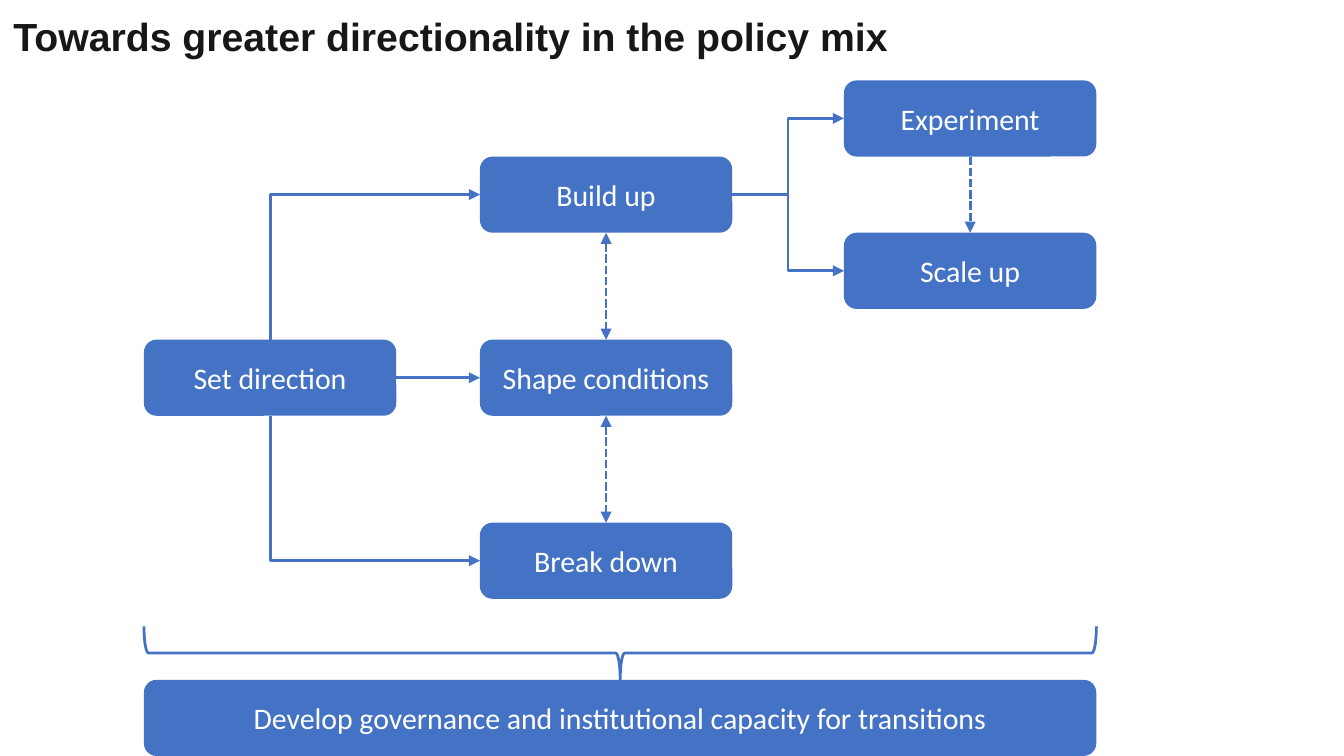
from pptx import Presentation
from pptx.dml.color import RGBColor
from pptx.enum.dml import MSO_LINE
from pptx.enum.shapes import MSO_CONNECTOR as Link, MSO_SHAPE as Shape
from pptx.enum.text import MSO_ANCHOR as Anchor, PP_ALIGN as Align
from pptx.oxml.ns import qn
from pptx.util import Cm, Pt
from lxml.etree import SubElement

BLUE = RGBColor(0x44, 0x72, 0xC4)
WHITE = RGBColor(0xFF, 0xFF, 0xFF)
INK = RGBColor(0x18, 0x17, 0x17)
NODE_WIDTH, NODE_HEIGHT = Cm(4.77), Cm(1.44)
LINE_WIDTH = Pt(1.5)
TOP, LEFT, BOTTOM, RIGHT = range(4)


def add_span(frame, text, font, size, color, bold=False):
    span = frame.paragraphs[0].add_run()
    span.text = text
    span.font.name = font
    span.font.size = Pt(size)
    span.font.bold = bold
    span.font.color.rgb = color


def add_node(page, text, left, top, width=NODE_WIDTH):
    node = page.shapes.add_shape(Shape.ROUNDED_RECTANGLE, left, top, width, NODE_HEIGHT)
    node.shadow.inherit = False
    node.fill.solid()
    node.fill.fore_color.rgb = BLUE
    node.line.fill.background()
    node.text_frame.word_wrap = True
    node.text_frame.vertical_anchor = Anchor.MIDDLE
    node.text_frame.paragraphs[0].alignment = Align.CENTER
    add_span(node.text_frame, text, "Calibri", 16, WHITE)
    return node


def side_point(node, side):
    middle_x, middle_y = node.left + node.width // 2, node.top + node.height // 2
    return {
        TOP: (middle_x, node.top),
        LEFT: (node.left, middle_y),
        BOTTOM: (middle_x, node.top + node.height),
        RIGHT: (node.left + node.width, middle_y),
    }[side]


def style_arrow(arrow, ends=("tailEnd",), dashed=False):
    arrow.line.color.rgb = BLUE
    arrow.line.width = LINE_WIDTH
    if dashed:
        arrow.line.dash_style = MSO_LINE.SQUARE_DOT
    outline = arrow.line._get_or_add_ln()
    for end in ends:
        SubElement(outline, qn("a:" + end), type="triangle")
    SubElement(arrow._element.spPr, qn("a:effectLst"))


def add_straight_arrow(page, source, source_side, target, target_side, **style):
    arrow = page.shapes.add_connector(
        Link.STRAIGHT, *side_point(source, source_side), *side_point(target, target_side))
    arrow.begin_connect(source, source_side)
    arrow.end_connect(target, target_side)
    style_arrow(arrow, **style)


def add_step_arrow(page, source, target):
    arrow = page.shapes.add_connector(
        Link.ELBOW, *side_point(source, RIGHT), *side_point(target, LEFT))
    style_arrow(arrow)


def add_corner_arrow(page, source, side):
    def draw(target):
        start_x, start_y = side_point(source, side)
        end_x, end_y = side_point(target, LEFT)
        across, along = end_x - start_x, abs(end_y - start_y)
        middle_x, middle_y = (start_x + end_x) // 2, (start_y + end_y) // 2
        left, top = middle_x - along // 2, middle_y - across // 2
        near, far = (top + across, top) if side == TOP else (top, top + across)
        arrow = page.shapes.add_connector(Link.ELBOW, left + along, near, left, far)
        properties = arrow._element.spPr
        properties.find(qn("a:prstGeom")).set("prst", "bentConnector2")
        turn = 90 if side == TOP else 270
        properties.find(qn("a:xfrm")).set("rot", str(turn * 60000))
        style_arrow(arrow)
    return draw


def add_title(page, left, top, width, height):
    title = page.shapes.title
    title.left, title.top, title.width, title.height = left, top, width, height
    frame = title.text_frame
    frame.word_wrap = True
    frame.vertical_anchor = Anchor.TOP
    frame.paragraphs[0].alignment = Align.LEFT
    add_span(frame, "Towards greater directionality in the policy mix", "Arial", 21, INK, True)


def add_flow(page, left, top, width, height):
    middle_left = left + Cm(6.35)
    right_left = left + width - NODE_WIDTH
    first_top = top + NODE_HEIGHT
    pitch = (height - 2 * NODE_HEIGHT) // 2

    direction = add_node(page, "Set direction", left, first_top + pitch)
    build, shape, breakdown = [
        add_node(page, text, middle_left, first_top + row * pitch)
        for row, text in enumerate(("Build up", "Shape conditions", "Break down"))]
    experiment, scale = [
        add_node(page, text, right_left, top + row * 2 * NODE_HEIGHT)
        for row, text in enumerate(("Experiment", "Scale up"))]

    add_corner_arrow(page, direction, TOP)(build)
    add_corner_arrow(page, direction, BOTTOM)(breakdown)
    add_straight_arrow(page, direction, RIGHT, shape, LEFT)
    for target in (experiment, scale):
        add_step_arrow(page, build, target)
    add_straight_arrow(page, experiment, BOTTOM, scale, TOP, dashed=True)
    for upper, lower in ((build, shape), (shape, breakdown)):
        add_straight_arrow(page, upper, BOTTOM, lower, TOP,
                           ends=("headEnd", "tailEnd"), dashed=True)


def add_foundation(page, left, top, width, height):
    depth = height - NODE_HEIGHT
    brace = page.shapes.add_shape(
        Shape.RIGHT_BRACE, left + (width - depth) // 2, top + (depth - width) // 2, depth, width)
    brace.rotation = 90
    brace.shadow.inherit = False
    brace.fill.background()
    brace.line.color.rgb = BLUE
    brace.line.width = LINE_WIDTH
    add_node(page, "Develop governance and institutional capacity for transitions",
             left, top + depth, width)


def main():
    deck = Presentation()
    deck.slide_width, deck.slide_height = Cm(25.4), Cm(14.29)
    page = deck.slides.add_slide(deck.slide_layouts[5])
    add_title(page, Cm(0), Cm(0.1), Cm(18), Cm(1.37))
    add_flow(page, Cm(2.72), Cm(1.52), Cm(18), Cm(9.8))
    add_foundation(page, Cm(2.72), Cm(11.84), Cm(18), Cm(2.45))
    deck.save("out.pptx")


if __name__ == "__main__":
    main()
